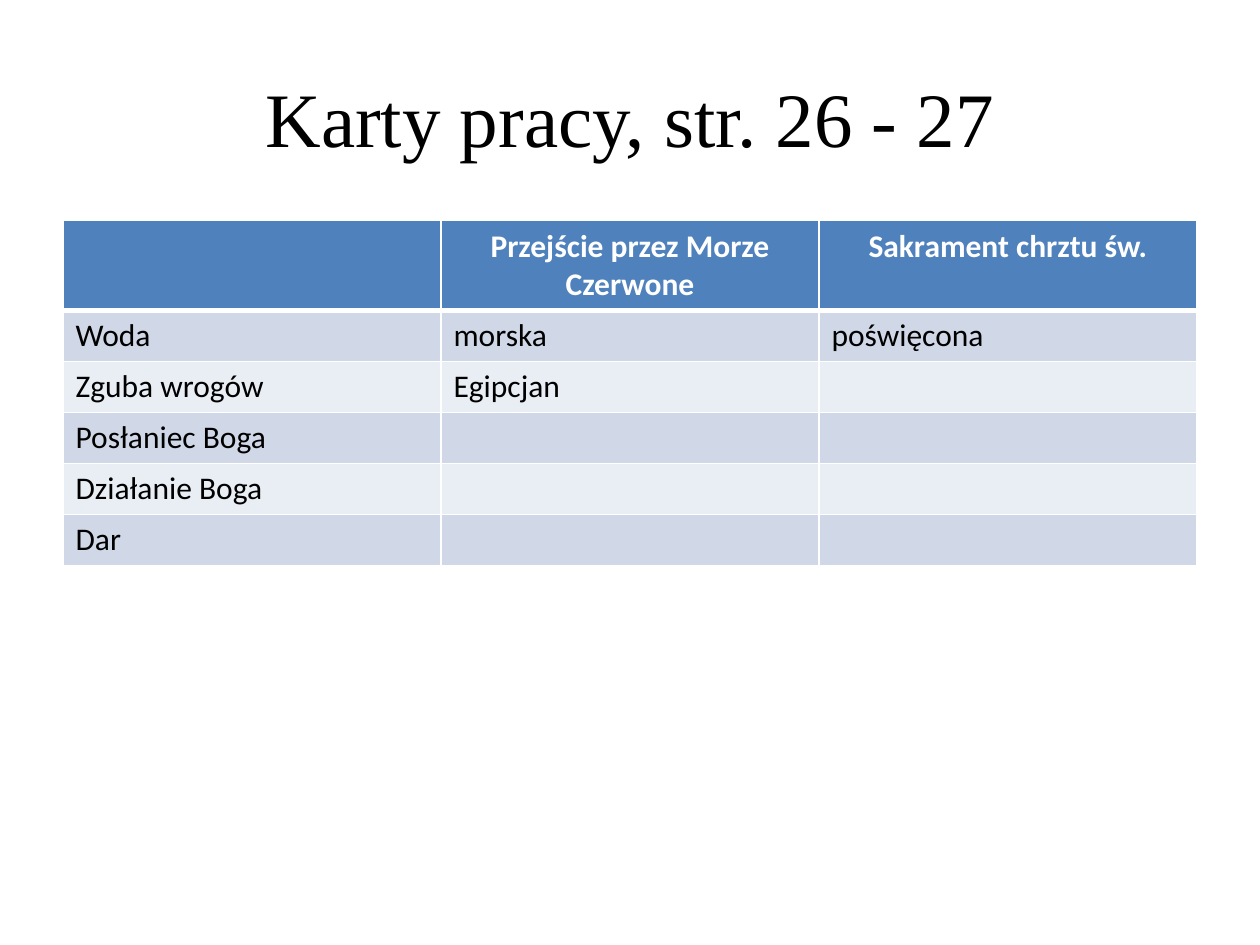
from lxml import etree
from pptx import Presentation
from pptx import util as u
from pptx.dml.color import RGBColor
from pptx.enum import text
from pptx.oxml import ns

COLORS = {
    "white": "FFFFFF",
    "black": "000000",
    "header": "4F81BD",
    "odd": "D0D8E8",
    "even": "E9EDF4",
}
ROWS = [
    ["", "Przejście przez Morze Czerwone", "Sakrament chrztu św."],
    ["Woda", "morska", "poświęcona"],
    ["Zguba wrogów", "Egipcjan", ""],
    ["Posłaniec Boga", "", ""],
    ["Działanie Boga", "", ""],
    ["Dar", "", ""],
]
LEFT, WIDTH = u.Cm(1.27), u.Cm(22.86)
HEADER_HEIGHT, ROW_HEIGHT = u.Cm(1.78), u.Cm(1.03)


def color(name):
    return RGBColor.from_string(COLORS[name])


def add_span(para, words, font_name, size, color_name, bold=False):
    span = para.add_run()
    span.text = words
    span.font.name = font_name
    span.font.size = u.Pt(size)
    span.font.bold = bold
    span.font.color.rgb = color(color_name)


def set_borders(cell, widths):
    """Draw white cell borders; widths maps a side (L, R, T, B) to points."""
    properties = cell._tc.get_or_add_tcPr()
    for side, width in widths.items():
        line = etree.SubElement(properties, ns.qn(f"a:ln{side}"), w=str(u.Pt(width)))
        fill = etree.SubElement(line, ns.qn("a:solidFill"))
        etree.SubElement(fill, ns.qn("a:srgbClr"), val=COLORS["white"])


def add_title(page, words):
    title = page.shapes.title
    title.left, title.top = LEFT, u.Cm(0.76)
    title.width, title.height = WIDTH, u.Cm(3.18)
    frame = title.text_frame
    frame.vertical_anchor = text.MSO_ANCHOR.MIDDLE
    para = frame.paragraphs[0]
    para.alignment = text.PP_ALIGN.CENTER
    add_span(para, words, "Times New Roman", 44, "black")


def format_cell(cell, words, row):
    is_header = row == 0
    set_borders(cell, {"L": 1, "R": 1, "T": 3 if row == 1 else 1, "B": 3 if is_header else 1})
    cell.fill.solid()
    cell.fill.fore_color.rgb = color("header" if is_header else "odd" if row % 2 else "even")
    para = cell.text_frame.paragraphs[0]
    para.font.size = u.Pt(18)
    if is_header:
        para.alignment = text.PP_ALIGN.CENTER
    if words:
        add_span(para, words, "Calibri", 18, "white" if is_header else "black", is_header)


def add_comparison_table(page, rows):
    height = HEADER_HEIGHT + ROW_HEIGHT * (len(rows) - 1)
    frame = page.shapes.add_table(len(rows), len(rows[0]), LEFT, u.Cm(4.45), WIDTH, height)
    table = frame.table
    for row, values in enumerate(rows):
        table.rows[row].height = ROW_HEIGHT if row else HEADER_HEIGHT
        for column, words in enumerate(values):
            format_cell(table.cell(row, column), words, row)


def main():
    deck = Presentation()
    deck.slide_width, deck.slide_height = u.Cm(25.4), u.Cm(19.05)
    page = deck.slides.add_slide(deck.slide_layouts[5])
    add_title(page, "Karty pracy, str. 26 - 27")
    add_comparison_table(page, ROWS)
    deck.save("out.pptx")


if __name__ == "__main__":
    main()
